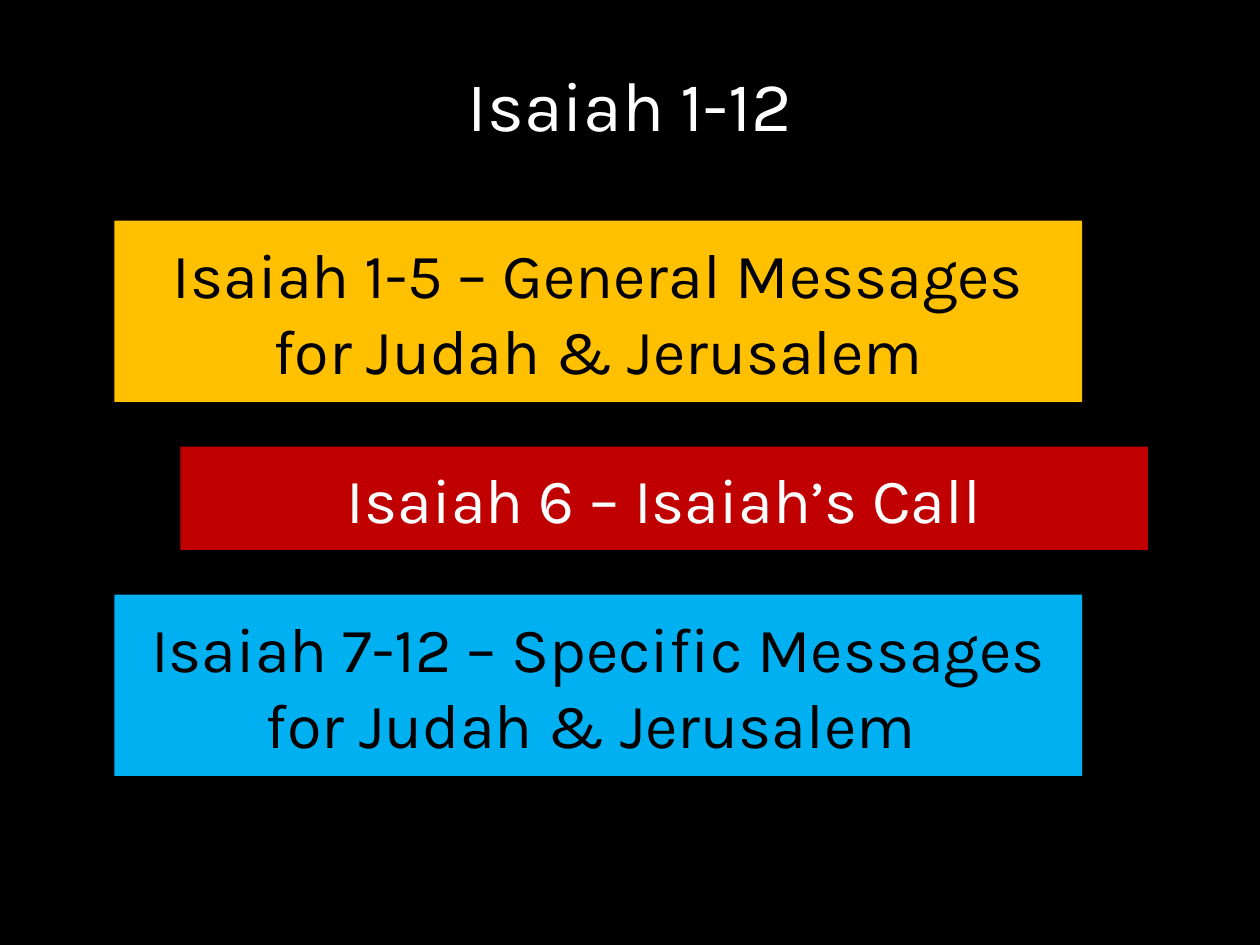
from dataclasses import dataclass
from pptx import Presentation
from pptx.dml.color import RGBColor as RGB
from pptx.enum.shapes import MSO_SHAPE as SHAPE
from pptx.enum.text import MSO_ANCHOR as ANCHOR, PP_ALIGN as ALIGN
from pptx.util import Pt


@dataclass(frozen=True)
class Theme:
    font: str = "Karla"
    title_size: int = 40
    band_size: int = 36
    black: RGB = RGB(0x00, 0x00, 0x00)
    white: RGB = RGB(0xFF, 0xFF, 0xFF)
    gold: RGB = RGB(0xFF, 0xC0, 0x00)
    red: RGB = RGB(0xC0, 0x00, 0x00)
    blue: RGB = RGB(0x00, 0xB0, 0xF0)


THEME = Theme()


def set_text(sp, text, size, color, anchor, spacing=None):
    tf = sp.text_frame
    tf.word_wrap = True
    tf.vertical_anchor = anchor
    p = tf.paragraphs[0]
    p.alignment = ALIGN.CENTER
    if spacing:
        p.line_spacing = spacing
    r = p.add_run()
    r.text = text
    for name, value in {"name": THEME.font, "size": Pt(size)}.items():
        setattr(r.font, name, value)
    r.font.color.rgb = color


def add_title(slide, box, text):
    sp = slide.shapes.title
    for name, value in zip(("left", "top", "width", "height"), box):
        setattr(sp, name, Pt(value))
    set_text(sp, text, THEME.title_size, THEME.white, ANCHOR.TOP, 0.9)


def add_bands(slide, box, bands, gap):
    """Stack bands down the box, each with its own indent and height."""
    left, top, width = box
    for text, indent, height, fill, color in bands:
        sp = slide.shapes.add_shape(
            SHAPE.RECTANGLE, Pt(left + indent), Pt(top), Pt(width), Pt(height))
        sp.shadow.inherit = False
        sp.fill.solid()
        sp.fill.fore_color.rgb = fill
        sp.line.fill.background()
        set_text(sp, text, THEME.band_size, color, ANCHOR.MIDDLE)
        top += height + gap


def main():
    prs = Presentation()
    prs.slide_width, prs.slide_height = Pt(720), Pt(540)
    slide = prs.slides.add_slide(prs.slide_layouts[5])
    slide.background.fill.solid()
    slide.background.fill.fore_color.rgb = THEME.black

    # Heading
    add_title(slide, (49.5, 36.75, 621, 61), "Isaiah 1-12")

    # Sections of the book: text, indent, height, fill, text colour
    tall, short = 103.6, 59
    add_bands(slide, (65.4, 126, 553), [
        ("Isaiah 1-5 – General Messages for Judah & Jerusalem",
         0, tall, THEME.gold, THEME.black),
        ("Isaiah 6 – Isaiah’s Call", 37.6, short, THEME.red, THEME.white),
        ("Isaiah 7-12 – Specific Messages for Judah & Jerusalem ",
         0, tall, THEME.blue, THEME.black),
    ], gap=25.6)

    prs.save("out.pptx")


if __name__ == "__main__":
    main()
